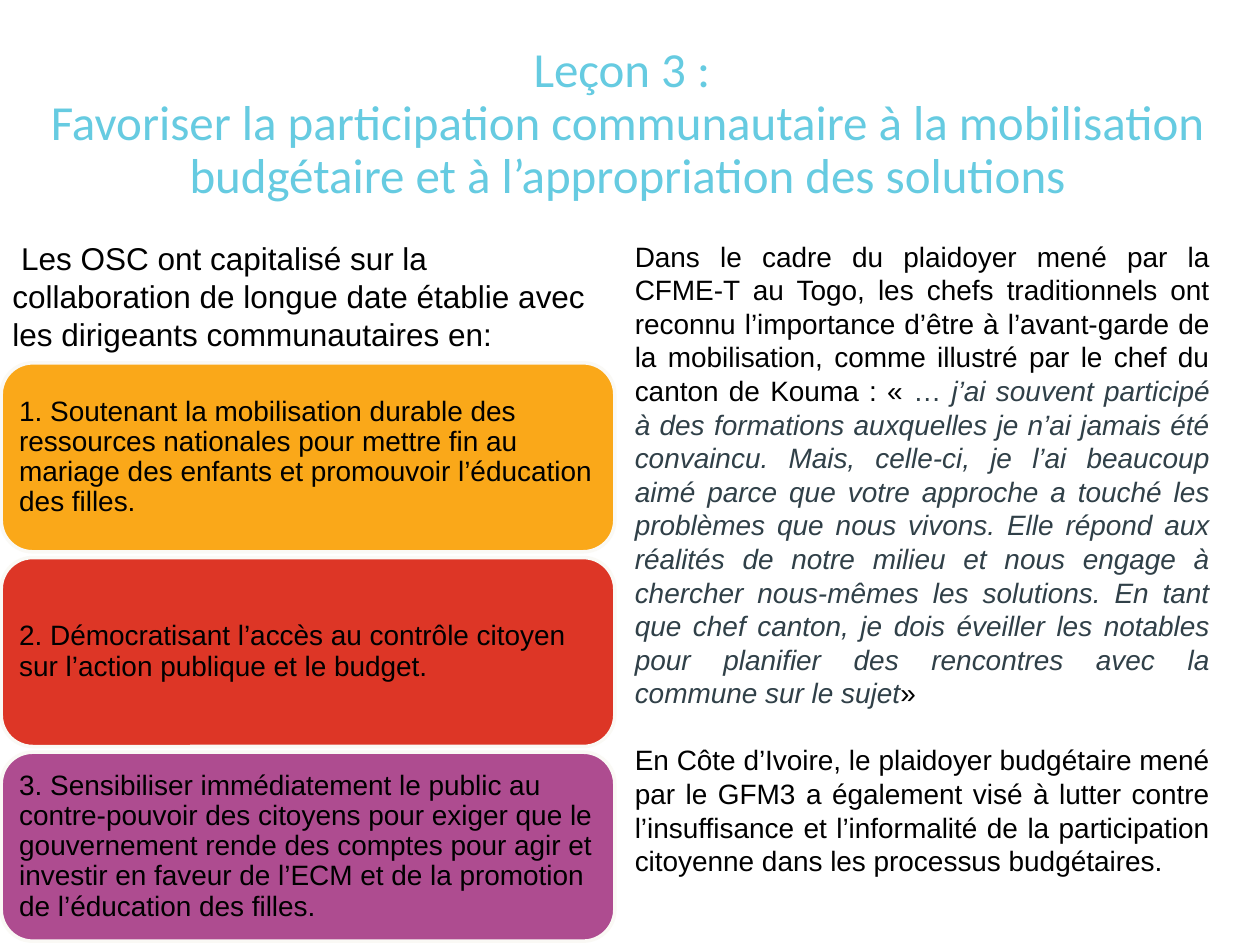
from dataclasses import dataclass

from pptx import Presentation
from pptx.dml.color import RGBColor
from pptx.enum.shapes import MSO_SHAPE
from pptx.enum.text import MSO_ANCHOR, PP_ALIGN
from pptx.util import Inches, Pt


@dataclass(frozen=True)
class Theme:
    title: str = "66CBE1"
    ink: str = "000000"
    quote: str = "304048"
    outline: str = "FAF9F5"
    cards: tuple = ("FAA819", "DD3626", "AE4C90")
    heading_font: str = "Calibri"
    body_font: str = "Arial"
    title_size: int = 28
    intro_size: int = 18
    body_size: int = 16


theme = Theme()


def style(span, size, color, font=theme.body_font, italic=False):
    span.font.name = font
    span.font.size = Pt(size)
    span.font.color.rgb = RGBColor.from_string(color)
    span.font.italic = italic


def add_text_box(left, top, width, height):
    box = page.shapes.add_textbox(Inches(left), Inches(top), Inches(width), Inches(height))
    box.text_frame.word_wrap = True
    return box.text_frame


deck = Presentation()
deck.slide_width, deck.slide_height = Inches(10), Inches(7.5)
page = deck.slides.add_slide(deck.slide_layouts[6])

# Two columns below the title
column_top = 1.85
column_width = 4.87
right_left, right_width = 4.94, 4.76

# Title
frame = add_text_box(-0.02, 0.28, 10, 1.42)
frame.vertical_anchor = MSO_ANCHOR.MIDDLE
para = frame.paragraphs[0]
para.text = (
    "Leçon 3 : \vFavoriser la participation communautaire à la mobilisation "
    "budgétaire et à l’appropriation des solutions"
)
para.alignment = PP_ALIGN.CENTER
para.line_spacing = 0.9
for span in para.runs:
    style(span, theme.title_size, theme.title, theme.heading_font)

# Coloured cards stacked in the left column
card_texts = (
    "1. Soutenant la mobilisation durable des ressources nationales pour mettre fin "
    "au mariage des enfants et promouvoir l’éducation des filles.",
    "2. Démocratisant l’accès au contrôle citoyen sur l’action publique et le budget.",
    "3. Sensibiliser immédiatement le public au contre-pouvoir des citoyens pour "
    "exiger que le gouvernement rende des comptes pour agir et investir en faveur de "
    "l’ECM et de la promotion de l’éducation des filles.",
)
card_top, card_height, card_pitch = 2.88, 1.5, 1.545
for row, (text, color) in enumerate(zip(card_texts, theme.cards)):
    card = page.shapes.add_shape(
        MSO_SHAPE.ROUNDED_RECTANGLE,
        Inches(0.01), Inches(card_top + row * card_pitch),
        Inches(column_width), Inches(card_height),
    )
    card.shadow.inherit = False
    card.fill.solid()
    card.fill.fore_color.rgb = RGBColor.from_string(color)
    card.line.color.rgb = RGBColor.from_string(theme.outline)
    card.line.width = Pt(2)
    frame = card.text_frame
    frame.word_wrap = True
    frame.vertical_anchor = MSO_ANCHOR.MIDDLE
    frame.margin_left = frame.margin_right = Inches(0.07)
    frame.margin_top = frame.margin_bottom = Inches(0.07)
    para = frame.paragraphs[0]
    para.text = text
    para.alignment = PP_ALIGN.LEFT
    para.line_spacing = 0.9
    style(para.runs[0], theme.body_size, theme.ink)

# Introduction above the cards
frame = add_text_box(0, column_top, column_width, 1.31)
frame.text = (
    " Les OSC ont capitalisé sur la collaboration de longue date établie avec "
    "les dirigeants communautaires en:"
)
style(frame.paragraphs[0].runs[0], theme.intro_size, theme.ink)

# Testimony in the right column: text, colour, italic
testimony = (
    (
        ("Dans le cadre du plaidoyer mené par la CFME-T au Togo, les chefs traditionnels "
         "ont reconnu l’importance d’être à l’avant-garde de la mobilisation, comme "
         "illustré par le chef du canton de Kouma : « ", theme.ink, False),
        ("… ", theme.quote, False),
        ("j’ai souvent participé à des formations auxquelles je n’ai jamais été "
         "convaincu. Mais, celle-ci, je l’ai beaucoup aimé parce que votre approche a "
         "touché les problèmes que nous vivons. Elle répond aux réalités de notre milieu "
         "et nous engage à chercher nous-mêmes les solutions. En tant que chef canton, je "
         "dois éveiller les notables pour planifier des rencontres avec la commune sur "
         "le sujet", theme.quote, True),
        ("»", theme.ink, False),
    ),
    (
        ("En Côte d’Ivoire, le plaidoyer budgétaire mené par le GFM3 a également visé à "
         "lutter contre l’insuffisance et l’informalité de la participation citoyenne "
         "dans les processus budgétaires.", theme.ink, False),
    ),
)
frame = add_text_box(right_left, column_top, right_width, 5.76)
for number, spans in enumerate(testimony):
    para = frame.add_paragraph() if number else frame.paragraphs[0]
    para.alignment = PP_ALIGN.JUSTIFY
    para.space_before = Pt(number * 1.2 * theme.body_size)
    for text, color, italic in spans:
        span = para.add_run()
        span.text = text
        style(span, theme.body_size, color, italic=italic)

deck.save("out.pptx")
